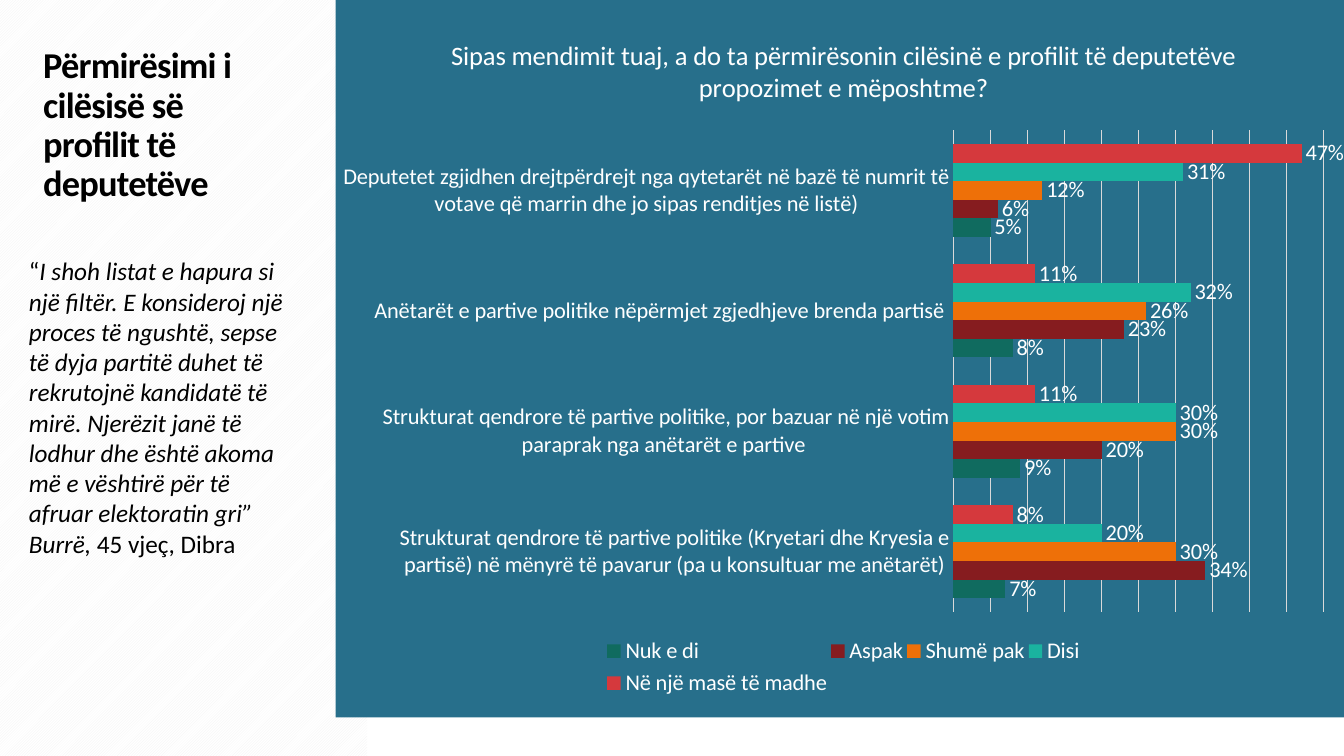
import pptx
import pptx.chart.data
import pptx.dml.color
import pptx.enum.chart
import pptx.enum.dml
import pptx.enum.shapes
import pptx.enum.text
import pptx.oxml
import pptx.oxml.ns
import pptx.util
from pptx.util import Cm

RGBColor = pptx.dml.color.RGBColor
WHITE = RGBColor(0xFF, 0xFF, 0xFF)
BLACK = RGBColor(0, 0, 0)
STRIPE = RGBColor(0xF2, 0xF2, 0xF2)
PANEL = RGBColor(0x27, 0x6F, 0x8B)
GRID = RGBColor(0xD9, 0xD9, 0xD9)
RED = RGBColor(0xD5, 0x39, 0x3D)
TEAL = RGBColor(0x1A, 0xB3, 0x9F)
ORANGE = RGBColor(0xEE, 0x70, 0x08)
MAROON = RGBColor(0x86, 0x1C, 0x1F)
GREEN = RGBColor(0x10, 0x6B, 0x5F)

HEADING = "Përmirësimi i cilësisë së profilit të deputetëve"
QUOTE = [
    ("“", False),
    ("I shoh listat e hapura si një filtër. E konsideroj një proces të ngushtë, "
     "sepse të dyja partitë duhet të rekrutojnë kandidatë të mirë. Njerëzit janë "
     "të lodhur dhe është akoma më e vështirë për të afruar elektoratin gri” "
     "Burrë, ", True),
    ("45 vjeç, Dibra", False),
]
QUESTION = ("Sipas mendimit tuaj, a do ta përmirësonin cilësinë e profilit të "
            "deputetëve propozimet e mëposhtme?")
PROPOSALS = [
    "Deputetet zgjidhen drejtpërdrejt nga qytetarët në bazë të numrit të votave "
    "që marrin dhe jo sipas renditjes në listë)",
    "Anëtarët e partive politike nëpërmjet zgjedhjeve brenda partisë ",
    "Strukturat qendrore të partive politike, por bazuar në një votim paraprak "
    "nga anëtarët e partive ",
    "Strukturat qendrore të partive politike (Kryetari dhe Kryesia e partisë) në "
    "mënyrë të pavarur (pa u konsultuar me anëtarët)",
]
ANSWERS = [
    ("Në një masë të madhe", RED, (0.47, 0.11, 0.11, 0.08)),
    ("Disi", TEAL, (0.31, 0.32, 0.30, 0.20)),
    ("Shumë pak", ORANGE, (0.12, 0.26, 0.30, 0.30)),
    ("Aspak", MAROON, (0.06, 0.23, 0.20, 0.34)),
    ("Nuk e di", GREEN, (0.05, 0.08, 0.09, 0.07)),
]


def style(font, size, color, bold=False):
    font.name = "Calibri"
    font.size = pptx.util.Pt(size)
    font.color.rgb = color
    font.bold = bold


def add_block(page, left, top, width, height):
    block = page.shapes.add_shape(
        pptx.enum.shapes.MSO_SHAPE.RECTANGLE, left, top, width, height)
    block.shadow.inherit = False
    block.line.fill.background()
    return block


def add_text(page, left, top, width, height):
    box = page.shapes.add_textbox(left, top, width, height)
    box.text_frame.word_wrap = True
    return box.text_frame.paragraphs[0]


def place(element, x, y, width, height, inner=False):
    """Fix the place of a chart part as fractions of the chart."""
    for old in element.findall(pptx.oxml.ns.qn("c:layout")):
        element.remove(old)
    target = '<c:layoutTarget val="inner"/>' if inner else ""
    sizes = "".join(f'<c:{tag} val="{value}"/>' for tag, value in
                    zip("xywh", (x, y, width, height)))
    layout = pptx.oxml.parse_xml(
        f'<c:layout {pptx.oxml.ns.nsdecls("c")}><c:manualLayout>{target}'
        f'<c:xMode val="edge"/><c:yMode val="edge"/>{sizes}'
        '</c:manualLayout></c:layout>')
    element.insert(0 if inner else 1, layout)


def add_sidebar(page, left, top, width, height):
    # Striped background
    stripes = add_block(page, left, top, width, height)
    stripes.fill.patterned()
    stripes.fill.pattern = pptx.enum.dml.MSO_PATTERN.DARK_UPWARD_DIAGONAL
    stripes.fill.fore_color.rgb = STRIPE
    stripes.fill.back_color.rgb = WHITE

    # Heading
    para = add_text(page, left + Cm(0.84), top + Cm(1.07), Cm(6.53), Cm(4.9))
    para.line_spacing = 0.9
    span = para.add_run()
    span.text = HEADING
    style(para.font, 26, BLACK, bold=True)
    span.font._element.set("spc", "-60")

    # Quotation
    para = add_text(page, left + Cm(0.48), top + Cm(6.32), Cm(7.24), Cm(8.71))
    for words, italic in QUOTE:
        span = para.add_run()
        span.text = words
        span.font.italic = italic
    style(para.font, 18, BLACK)


def add_survey(page, left, top, width, height):
    # Panel
    panel = add_block(page, left, top, width, height)
    panel.fill.solid()
    panel.fill.fore_color.rgb = PANEL

    # Chart
    data = pptx.chart.data.CategoryChartData(number_format="0%")
    data.categories = PROPOSALS
    for name, _, values in ANSWERS:
        data.add_series(name, values)
    chart = page.shapes.add_chart(
        pptx.enum.chart.XL_CHART_TYPE.BAR_CLUSTERED, left + Cm(0.18),
        top + Cm(0.33), width - Cm(0.18), Cm(17.35), data).chart
    style(chart.font, 16, WHITE)

    # Question
    chart.has_title = True
    chart.chart_title.include_in_layout = False
    para = chart.chart_title.text_frame.paragraphs[0]
    para.text = QUESTION
    style(para.font, 19, WHITE)

    # Axes
    proposals = chart.category_axis
    proposals.reverse_order = True
    proposals.major_tick_mark = pptx.enum.chart.XL_TICK_MARK.NONE
    proposals.format.line.fill.background()
    style(proposals.tick_labels.font, 16, WHITE)
    shares = chart.value_axis
    shares.visible = False
    shares.minimum_scale, shares.maximum_scale = 0, 0.5
    shares.major_unit = 0.05
    shares.major_gridlines.format.line.color.rgb = GRID
    shares.major_gridlines.format.line.width = pptx.util.Pt(0.75)

    # Bars
    plot = chart.plots[0]
    plot.gap_width = 150
    plot.overlap = 0
    plot.vary_by_categories = False
    for bars, (_, color, _) in zip(plot.series, ANSWERS):
        bars.format.fill.solid()
        bars.format.fill.fore_color.rgb = color
        labels = bars.data_labels
        labels.show_value = True
        labels.number_format = "0%"
        labels.number_format_is_linked = False
        labels.position = pptx.enum.chart.XL_LABEL_POSITION.OUTSIDE_END
        style(labels.font, 16, WHITE)

    # Legend
    chart.has_legend = True
    legend = chart.legend
    legend.position = pptx.enum.chart.XL_LEGEND_POSITION.BOTTOM
    legend.include_in_layout = False
    style(legend.font, 16, WHITE)

    place(chart._chartSpace.chart.plotArea, 0.61, 0.17, 0.37, 0.7, inner=True)
    place(legend._element, 0.26, 0.9, 0.48, 0.1)


def main():
    deck = pptx.Presentation()
    deck.slide_width, deck.slide_height = Cm(33.87), Cm(19.05)
    page = deck.slides.add_slide(deck.slide_layouts[6])
    add_sidebar(page, 0, 0, Cm(9.25), deck.slide_height)
    panel_left = Cm(8.46)
    add_survey(page, panel_left, 0, deck.slide_width - panel_left, Cm(18.08))
    deck.save("out.pptx")


if __name__ == "__main__":
    main()
